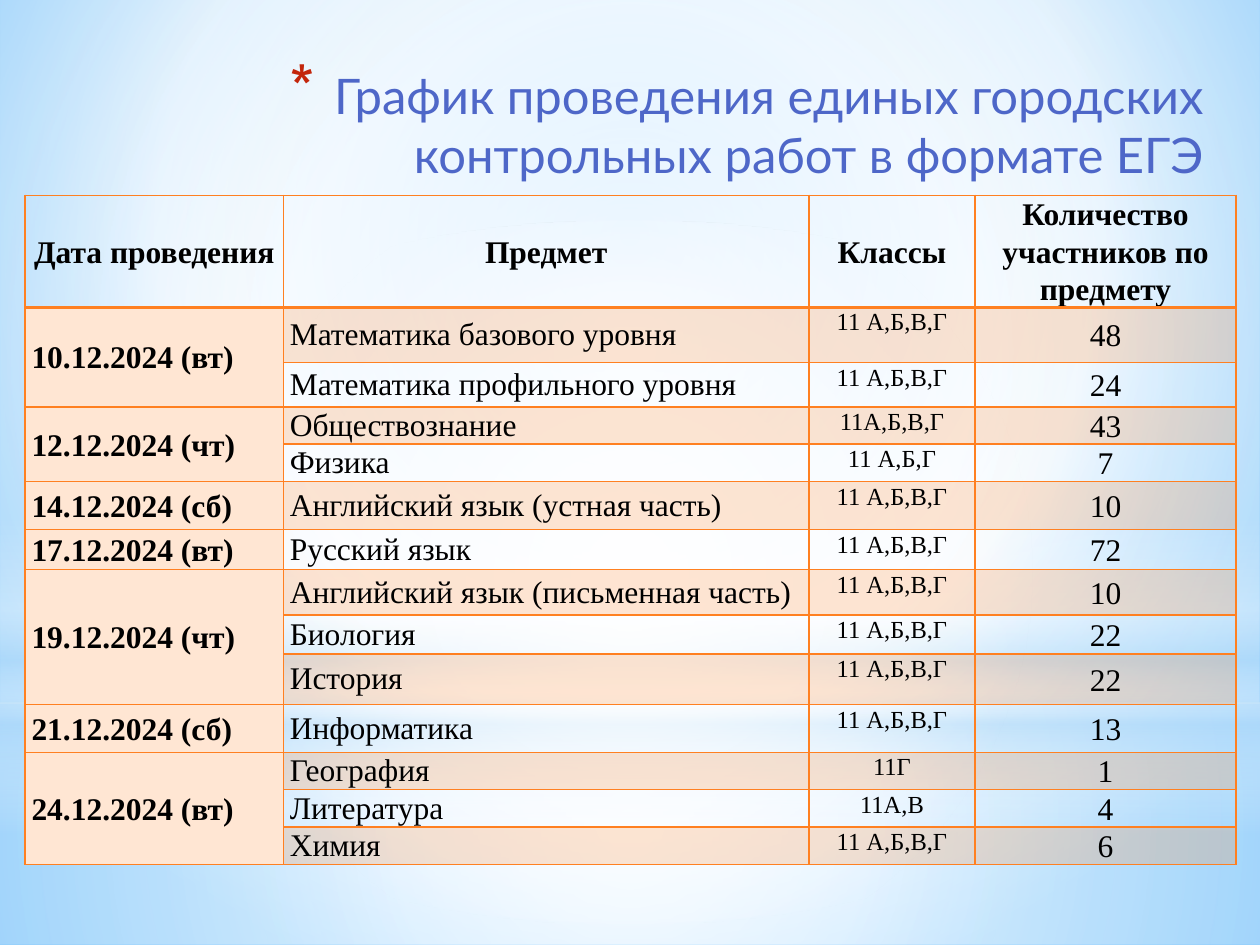
from lxml import etree
from pptx import Presentation
from pptx.dml.color import RGBColor
from pptx.enum.shapes import MSO_SHAPE
from pptx.enum.text import MSO_ANCHOR, PP_ALIGN
from pptx.oxml import parse_xml
from pptx.oxml.ns import nsdecls, qn
from pptx.util import Inches, Pt

RECT, OVAL = MSO_SHAPE.RECTANGLE, MSO_SHAPE.OVAL
LEFT, CENTER, RIGHT = PP_ALIGN.LEFT, PP_ALIGN.CENTER, PP_ALIGN.RIGHT
TOP, MIDDLE = MSO_ANCHOR.TOP, MSO_ANCHOR.MIDDLE

WHITE = RGBColor(0xFF, 0xFF, 0xFF)
BLACK = RGBColor(0, 0, 0)
SKY = RGBColor(0x9E, 0xD5, 0xFF)
BLUE = RGBColor(0x5B, 0xB9, 0xFF)
HAZE = RGBColor(0xB4, 0xDC, 0xFA)
INDIGO = RGBColor(0x4E, 0x67, 0xC8)
RED = RGBColor(0xC3, 0x26, 0x0C)
ORANGE = RGBColor(0xFF, 0x80, 0x21)
PEACH = RGBColor(0xFF, 0xE6, 0xD3)

GRID_COLS, GRID_ROWS = 1000, 750
UNIT = Inches(10) // GRID_COLS
MIDPOINT = (50, 50, 50, 50)

TITLE = "График проведения единых городских контрольных работ в формате ЕГЭ"
HEADER = ("Дата проведения", "Предмет", "Классы", "Количество участников по предмету")
ALL = "11 А,Б,В,Г"
EXAMS = [
    ("10.12.2024 (вт)", [("Математика базового уровня", ALL, 48),
                         ("Математика профильного уровня", ALL, 24)]),
    ("12.12.2024 (чт)", [("Обществознание", "11А,Б,В,Г", 43),
                         ("Физика", "11 А,Б,Г", 7)]),
    ("14.12.2024 (сб)", [("Английский язык (устная часть)", ALL, 10)]),
    ("17.12.2024 (вт)", [("Русский язык", ALL, 72)]),
    ("19.12.2024 (чт)", [("Английский язык (письменная часть)", ALL, 10),
                         ("Биология", ALL, 22),
                         ("История", ALL, 22)]),
    ("21.12.2024 (сб)", [("Информатика", ALL, 13)]),
    ("24.12.2024 (вт)", [("География", "11Г", 1),
                         ("Литература", "11А,В", 4),
                         ("Химия", ALL, 6)]),
]
COL_WIDTHS = (205, 417, 132, 207)
ROW_HEIGHTS = (83, 44, 35, 27, 27, 38, 32, 36, 31, 40, 38, 25, 25, 25)


def grid(*box):
    """Turn grid columns and rows into slide lengths."""
    return [v * UNIT for v in box]


def set_gradient(element, stops, to=None):
    """Swap the solid fill inside an element for a radial or vertical gradient."""
    marks = "".join(
        f'<a:gs pos="{pos * 1000}"><a:srgbClr val="{color}">'
        f'<a:alpha val="{alpha * 1000}"/></a:srgbClr></a:gs>'
        for pos, color, alpha in stops)
    course = '<a:lin ang="5400000" scaled="0"/>'
    if to:
        sides = " ".join(f'{k}="{v * 1000}"' for k, v in zip("ltrb", to))
        course = f'<a:path path="circle"><a:fillToRect {sides}/></a:path>'
    solid = next(element.iter(qn("a:solidFill")))
    solid.getparent().replace(solid, parse_xml(
        f'<a:gradFill {nsdecls("a")} rotWithShape="1"><a:gsLst>{marks}</a:gsLst>'
        f'{course}</a:gradFill>'))


def add_glow(s, kind, box, stops, to=None):
    """Add one soft backdrop shape."""
    sp = s.shapes.add_shape(kind, *grid(*box))
    sp.shadow.inherit = False
    sp.line.fill.background()
    sp.fill.solid()
    sp.fill.fore_color.rgb = WHITE
    set_gradient(sp._element.spPr, stops, to)


def add_backdrop(s):
    """Paint the slide background and its layers of light."""
    fill = s.background.fill
    fill.solid()
    fill.fore_color.rgb = WHITE
    set_gradient(s._element, [(0, SKY, 100), (60, WHITE, 100), (100, BLUE, 100)],
                 (20, 10, 20, 60))
    add_glow(s, RECT, (0, 558, GRID_COLS, 192),
             [(0, WHITE, 91), (37, WHITE, 76), (100, HAZE, 79)], MIDPOINT)
    add_glow(s, RECT, (0, 0, GRID_COLS, 558),
             [(0, WHITE, 89), (48, WHITE, 62), (100, HAZE, 79)], MIDPOINT)
    add_glow(s, RECT, (0, 412, GRID_COLS, 250),
             [(0, WHITE, 0), (29, WHITE, 30), (45, HAZE, 40),
              (55, WHITE, 26), (65, HAZE, 60), (100, WHITE, 0)])
    add_glow(s, OVAL, (0, 175, GRID_COLS, 558),
             [(0, WHITE, 100), (56, WHITE, 0)], MIDPOINT)


def add_text(p, text, font, size, color, bold=False):
    """Add one formatted run to a paragraph."""
    r = p.add_run()
    r.text = text
    r.font.name, r.font.size, r.font.bold = font, Pt(size), bold
    r.font.color.rgb = color


def add_title(s, box):
    """Fill the title placeholder, bring it forward and give it a star bullet."""
    sp = s.shapes.title
    s.shapes._spTree.append(sp._element)
    sp.left, sp.top, sp.width, sp.height = grid(*box)
    tf = sp.text_frame
    tf.word_wrap, tf.vertical_anchor = True, MIDDLE
    p = tf.paragraphs[0]
    p.alignment = RIGHT
    add_text(p, TITLE, "Lato", 28, INDIGO)
    pPr = p._p.get_or_add_pPr()
    pPr.set("marL", str(Inches(0.35)))
    pPr.set("indent", str(-Inches(0.35)))
    color = etree.SubElement(pPr, qn("a:buClr"))
    etree.SubElement(color, qn("a:srgbClr"), val=str(RED))
    etree.SubElement(pPr, qn("a:buSzPct"), val="128000")
    etree.SubElement(pPr, qn("a:buChar"), char="*")


def set_borders(cell, bottom):
    """Draw orange lines on all four sides of a cell."""
    tcPr = cell._tc.get_or_add_tcPr()
    for i, (side, width) in enumerate(zip("LRTB", (1, 1, 1, bottom))):
        tcPr.insert(i, parse_xml(
            f'<a:ln{side} {nsdecls("a")} w="{Pt(width)}"><a:solidFill>'
            f'<a:srgbClr val="{ORANGE}"/></a:solidFill></a:ln{side}>'))


def set_fill(cell, row, col):
    """Fill the date column with peach and every other row with a pale tint."""
    if row == 0 or (col and row % 2 == 0):
        cell.fill.background()
        return
    cell.fill.solid()
    cell.fill.fore_color.rgb = ORANGE if col else PEACH
    if col:
        color = next(cell._tc.tcPr.find(qn("a:solidFill")).iter(qn("a:srgbClr")))
        etree.SubElement(color, qn("a:alpha"), val="20000")


def write_cell(cell, text, row, col):
    """Write a cell in the style of its row and column."""
    classes = row > 0 and col == 2
    cell.vertical_anchor = TOP if classes else MIDDLE
    p = cell.text_frame.paragraphs[0]
    p.alignment = CENTER if row == 0 or col > 1 else LEFT
    if row == 0 or col != 1:
        p.line_spacing = 1.07
    add_text(p, str(text), "Times New Roman", 14 if classes else 18, BLACK,
             row == 0 or col == 0)


def add_schedule(s, box):
    """Build the exam table, with one merged date cell for each day."""
    frame = s.shapes.add_table(len(ROW_HEIGHTS), len(COL_WIDTHS), *grid(*box))
    table = frame.table
    table.first_row = table.horz_banding = False
    for column, width in zip(table.columns, COL_WIDTHS):
        column.width = width * UNIT
    for i, height in enumerate(ROW_HEIGHTS):
        table.rows[i].height = height * UNIT
        for j in range(len(COL_WIDTHS)):
            cell = table.cell(i, j)
            cell.margin_left = cell.margin_right = Inches(0.05)
            cell.margin_top = cell.margin_bottom = 0
            set_fill(cell, i, j)
            set_borders(cell, 1 if i else 2)
    for j, text in enumerate(HEADER):
        write_cell(table.cell(0, j), text, 0, j)
    row = 1
    for date, exams in EXAMS:
        first = table.cell(row, 0)
        write_cell(first, date, row, 0)
        if len(exams) > 1:
            first.merge(table.cell(row + len(exams) - 1, 0))
        for exam in exams:
            for j, value in enumerate(exam, 1):
                write_cell(table.cell(row, j), value, row, j)
            row += 1


def main():
    """Build and save the slide."""
    prs = Presentation()
    prs.slide_width, prs.slide_height = grid(GRID_COLS, GRID_ROWS)
    s = prs.slides.add_slide(prs.slide_layouts[5])
    add_backdrop(s)
    add_title(s, (83, 44, 882, 110))
    add_schedule(s, (20, 155, sum(COL_WIDTHS), sum(ROW_HEIGHTS)))
    prs.save("out.pptx")


if __name__ == "__main__":
    main()
